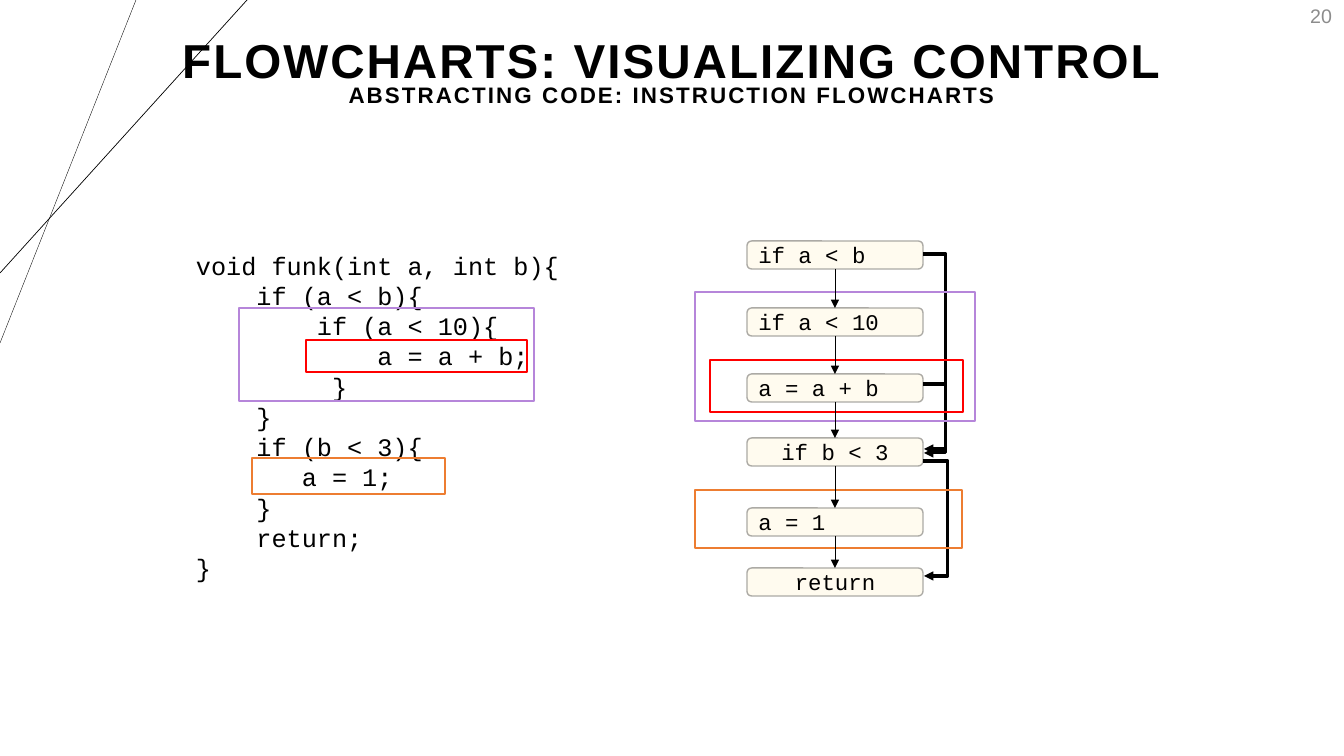
from dataclasses import dataclass
from itertools import pairwise

from lxml.etree import SubElement
from pptx import Presentation
from pptx.dml.color import RGBColor
from pptx.enum.shapes import MSO_CONNECTOR as Link, MSO_SHAPE as Shape
from pptx.enum.text import MSO_ANCHOR as Anchor, MSO_AUTO_SIZE as AutoSize, PP_ALIGN as Align
from pptx.oxml.ns import qn
from pptx.util import Pt

PX = 914400 / 100.8


@dataclass(frozen=True)
class Theme:
    heading: str = "Arial"
    mono: str = "Courier New"
    ink: str = "000000"
    muted: str = "8C8C8C"
    node: str = "FFF2CC"
    node_line: str = "ACAAA5"
    purple: str = "B686DA"
    red: str = "FF0000"
    orange: str = "ED7D31"
    title: int = 34
    subtitle: int = 16
    code: int = 18
    node_text: int = 16
    number: int = 14


T = Theme()

CODE = [
    (0, "void funk(int a, int b){"),
    (4, "if (a < b){"),
    (8, "if (a < 10){"),
    (12, "a = a + b;"),
    (9, "}"),
    (4, "}"),
    (4, "if (b < 3){"),
    (7, "a = 1;"),
    (4, "}"),
    (4, "return;"),
    (0, "}"),
]
NODES = [
    ("if a < b", 0, Align.LEFT),
    ("if a < 10", 67, Align.LEFT),
    ("a = a + b", 133, Align.LEFT),
    ("if b < 3", 197, Align.CENTER),
    ("a = 1", 267, Align.LEFT),
    ("return", 327, Align.CENTER),
]
JUMPS = [(13, 212, 23), (143, 208, 23), (220, 335, 25)]


def px(*lengths):
    return [round(n * PX) for n in lengths]


def rgb(color):
    return RGBColor.from_string(color)


def write(p, text, size, font=T.heading, color=T.ink, bold=False, align=Align.LEFT,
          tracking=0, spacing=None, indent=0):
    p.alignment = align
    p.line_spacing = spacing
    if indent:
        p._p.get_or_add_pPr().set("marL", str(indent))
    r = p.add_run()
    r.text = text
    r.font.name, r.font.size, r.font.bold = font, Pt(size), bold
    r.font.color.rgb = rgb(color)
    if tracking:
        r._r.get_or_add_rPr().set("spc", str(tracking))


def text_box(s, box, anchor=Anchor.MIDDLE):
    tf = s.shapes.add_textbox(*px(*box)).text_frame
    tf.word_wrap = True
    tf.vertical_anchor = anchor
    return tf


def connect(s, kind, start, end, width):
    c = s.shapes.add_connector(kind, *px(*start, *end))
    c.line.color.rgb = rgb(T.ink)
    c.line.width = Pt(width)
    SubElement(c._element.spPr, qn("a:effectLst"))
    return c


def arrow(s, kind, start, end, width):
    c = connect(s, kind, start, end, width)
    SubElement(c.line._get_or_add_ln(), qn("a:tailEnd"), type="triangle")
    return c


def frame(s, box, color, width):
    sp = s.shapes.add_shape(Shape.RECTANGLE, *px(*box))
    sp.shadow.inherit = False
    sp.fill.background()
    sp.line.color.rgb = rgb(color)
    sp.line.width = Pt(width)


def node(s, box, text, align):
    sp = s.shapes.add_shape(Shape.ROUNDED_RECTANGLE, *px(*box))
    sp.shadow.inherit = False
    sp.fill.solid()
    sp.fill.fore_color.rgb = rgb(T.node)
    color = sp._element.spPr.find(qn("a:solidFill"))[0]
    SubElement(color, qn("a:alpha"), val="30000")
    sp.line.color.rgb = rgb(T.node_line)
    sp.line.width = Pt(1)
    sp.text_frame.vertical_anchor = Anchor.MIDDLE
    write(sp.text_frame.paragraphs[0], text, T.node_text, T.mono, align=align)
    return sp


def jump(s, x, top, bottom, reach):
    c = arrow(s, Link.ELBOW, (x, top), (x + 1, bottom), 2.25)
    guides = c._element.spPr.find(qn("a:prstGeom")).get_or_add_avLst()
    SubElement(guides, qn("a:gd"), name="adj1", fmla=f"val {reach * 100000}")


def corner_lines(s, x, y):
    connect(s, Link.STRAIGHT, (x + 136, y), (x, y + 343), 0.25)
    connect(s, Link.STRAIGHT, (x + 247, y), (x, y + 273), 0.5)


def header(s, x, y, w, h):
    title = s.shapes.title
    title.left, title.top, title.width, title.height = px(x, y, w, h)
    tf = title.text_frame
    tf.auto_size = AutoSize.NONE
    tf.vertical_anchor = Anchor.MIDDLE
    style = dict(bold=True, align=Align.CENTER, tracking=150, spacing=0.9)
    write(tf.paragraphs[0], "FLOWCHARTS: VISUALIZING CONTROL", T.title, **style)
    tf = text_box(s, (x, y + 33, w, h))
    write(tf.paragraphs[0], "ABSTRACTING CODE: INSTRUCTION FLOWCHARTS", T.subtitle, **style)
    tf = text_box(s, (x + w - 303, y + 6, 302, 40))
    write(tf.paragraphs[0], "20", T.number, color=T.muted, align=Align.RIGHT)


def code_listing(s, x, y, w, h):
    tf = text_box(s, (x, y, w, h), Anchor.TOP)
    letter = Pt(T.code * 0.6)
    for i, (column, text) in enumerate(CODE):
        p = tf.add_paragraph() if i else tf.paragraphs[0]
        write(p, text, T.code, T.mono, spacing=Pt(T.code * 1.2), indent=column * letter)
    frame(s, (x + 66, y + 213, 193, 36), T.orange, 1)
    frame(s, (x + 53, y + 63, 295, 93), T.purple, 1.5)
    frame(s, (x + 120, y + 95, 221, 32), T.red, 1.5)


def flowchart(s, x, y):
    left, width = x + 52, 176
    nodes = [node(s, (left, y + top, width, 28), text, align) for text, top, align in NODES]
    for top, bottom, reach in JUMPS:
        jump(s, left + width, y + top, y + bottom, reach)
    frame(s, (x, y + 249, 267, 58), T.orange, 1)
    frame(s, (x, y + 51, 280, 129), T.purple, 1.5)
    frame(s, (x + 15, y + 119, 253, 52), T.red, 1.5)
    for upper, lower in pairwise(nodes):
        c = arrow(s, Link.STRAIGHT, (0, 0), (0, 0), 0.5)
        c.begin_connect(upper, 2)
        c.end_connect(lower, 0)


def main():
    prs = Presentation()
    prs.slide_width, prs.slide_height = px(1344, 756)
    s = prs.slides.add_slide(prs.slide_layouts[5])
    corner_lines(s, 0, 0)
    header(s, 1, -10, 1342, 146)
    code_listing(s, 186, 245, 385, 346)
    flowchart(s, 695, 241)
    prs.save("out.pptx")


if __name__ == "__main__":
    main()
